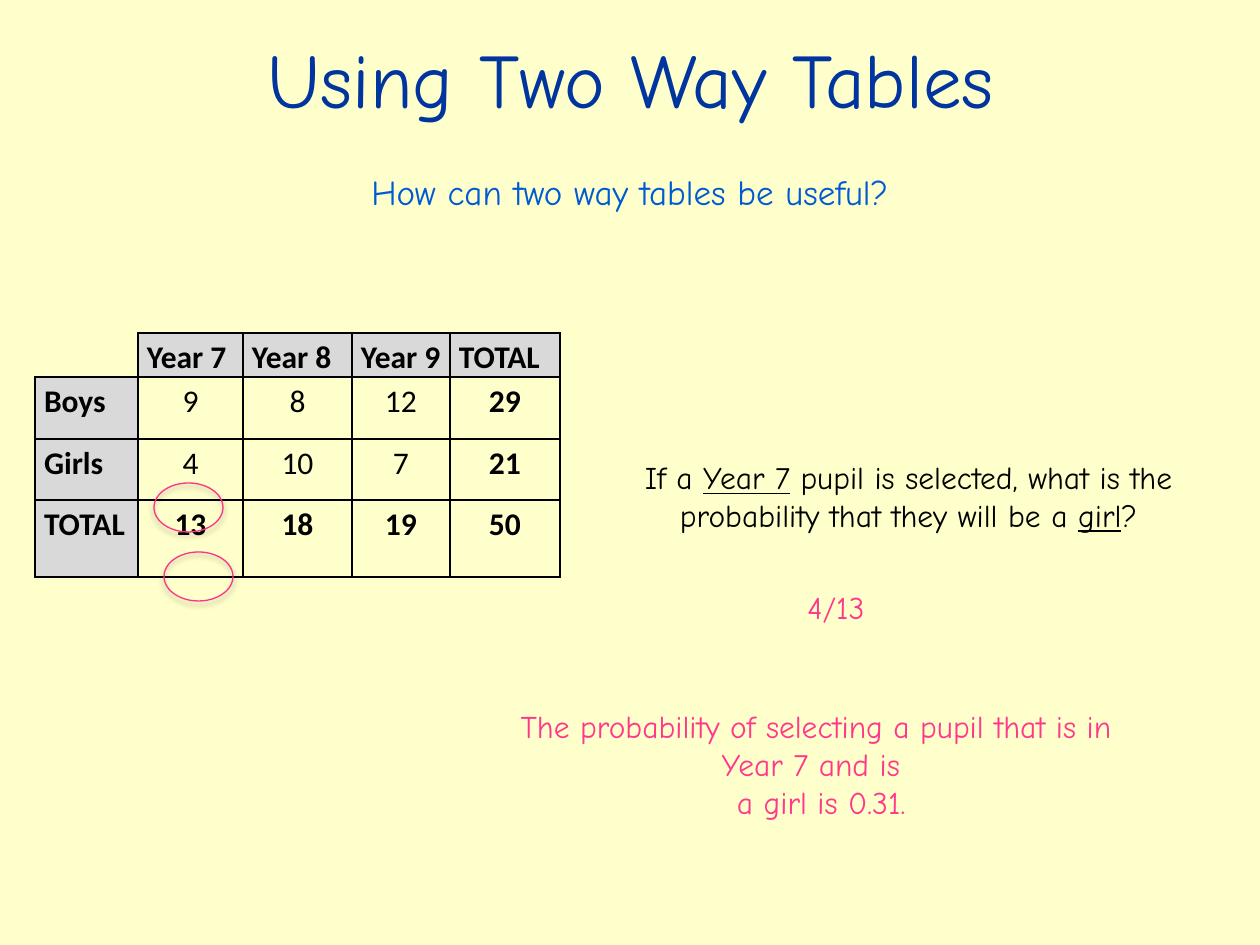
from lxml.etree import SubElement
from pptx import Presentation
from pptx.dml.color import RGBColor
from pptx.enum.shapes import MSO_SHAPE
from pptx.enum.text import MSO_ANCHOR, PP_ALIGN
from pptx.oxml import parse_xml
from pptx.oxml.ns import nsdecls, qn
from pptx.util import Emu, Pt

COLORS = {
    "background": "FFFFCC",
    "title": "00349E",
    "subtitle": "005BD3",
    "ink": "000000",
    "answer": "FF388C",
    "ring": "FE3288",
    "header": "D9D9D9",
}


def px(n):
    return Emu(round(n * 914400 / 126))


def rgb(name):
    return RGBColor.from_string(COLORS[name])


def write(p, text, size=18, color="ink", font="Comic Neue", bold=False,
          align=PP_ALIGN.CENTER, spacing=None):
    p.alignment = align
    p.line_spacing = spacing
    for i, part in enumerate(text.split("_")):
        r = p.add_run()
        r.text = part
        r.font.size = Pt(size)
        r.font.name = font
        r.font.bold = bold
        r.font.underline = i % 2 == 1
        r.font.color.rgb = rgb(color)


class Deck:
    def __init__(self, prs):
        self.s = prs.slides.add_slide(prs.slide_layouts[6])
        self.s.background.fill.solid()
        self.s.background.fill.fore_color.rgb = rgb("background")

    def text(self, x, y, w, h, *lines, wrap=True, top=6, **style):
        tf = self.s.shapes.add_textbox(px(x), px(y), px(w), px(h)).text_frame
        tf.word_wrap = wrap
        tf.vertical_anchor = MSO_ANCHOR.TOP
        tf.margin_top = px(top)
        for i, line in enumerate(lines):
            p = tf.add_paragraph() if i else tf.paragraphs[0]
            write(p, line, **style)

    def ring(self, x, y, w, h):
        sp = self.s.shapes.add_shape(MSO_SHAPE.OVAL, px(x), px(y), px(w), px(h))
        sp.fill.background()
        sp.line.color.rgb = rgb("ring")
        sp.line.width = Pt(0.75)
        sp._element.spPr.append(parse_xml(
            f'<a:effectLst {nsdecls("a")}>'
            f'<a:outerShdw blurRad="{Pt(3.1)}" dist="{Pt(1.8)}" dir="5400000" rotWithShape="0">'
            f'<a:srgbClr val="{COLORS["ink"]}"><a:alpha val="35000"/></a:srgbClr>'
            '</a:outerShdw></a:effectLst>'))

    def borders(self, cell, sides):
        tcPr = cell._tc.get_or_add_tcPr()
        for side in "LRTB":
            ln = SubElement(tcPr, qn(f"a:ln{side}"), w=str(Pt(1)))
            if side in sides:
                fill = SubElement(ln, qn("a:solidFill"))
                SubElement(fill, qn("a:srgbClr"), val=COLORS["ink"])
            else:
                SubElement(ln, qn("a:noFill"))

    def table(self, x, y, widths, heights, rows):
        table = self.s.shapes.add_table(
            len(heights), len(widths), px(x), px(y),
            px(sum(widths)), px(sum(heights))).table
        table.first_row = table.horz_banding = False
        for col, w in zip(table.columns, widths):
            col.width = px(w)
        for row, h in zip(table.rows, heights):
            row.height = px(h)
        for i, values in enumerate(rows):
            for j, value in enumerate(values):
                cell = table.cell(i, j)
                cell.margin_left = cell.margin_right = px(9)
                cell.margin_top = cell.margin_bottom = 0
                self.borders(cell, "LRTB" if value else "RB")
                header = i == 0 or j == 0
                total = i == len(rows) - 1 or j == len(values) - 1
                if header and value:
                    cell.fill.solid()
                    cell.fill.fore_color.rgb = rgb("header")
                else:
                    cell.fill.background()
                if value:
                    write(cell.text_frame.paragraphs[0], value, font="Calibri",
                          bold=header or total, spacing=1.15,
                          align=PP_ALIGN.LEFT if header else PP_ALIGN.CENTER)


def main():
    prs = Presentation()
    prs.slide_width, prs.slide_height = px(1260), px(945)
    deck = Deck(prs)
    deck.text(64, 26, 1134, 158, "Using Two Way Tables", size=44, color="title")
    deck.text(63, 165, 1134, 753, "How can two way tables be useful?",
              size=20, color="subtitle")
    deck.text(591, 265, 635, 585,
              "If a _Year 7_ pupil is selected, what is the probability "
              "that they will be a _girl_?", top=193)
    deck.table(35, 333, [103, 105, 109, 98, 110], [44, 62, 61, 77], [
        ["", "Year 7", "Year 8", "Year 9", "TOTAL"],
        ["Boys", "9", "8", "12", "29"],
        ["Girls", "4", "10", "7", "21"],
        ["TOTAL", "13", "18", "19", "50"],
    ])
    for x, y in [(154, 483), (164, 552)]:
        deck.ring(x, y, 69, 49)
    deck.text(789, 582, 94, 89, "4/13", wrap=False, color="answer")
    deck.text(501, 701, 630, 127,
              "The probability of selecting a pupil that is in Year 7 and is ",
              " a girl is 0.31.", color="answer")
    prs.save("out.pptx")


if __name__ == "__main__":
    main()
